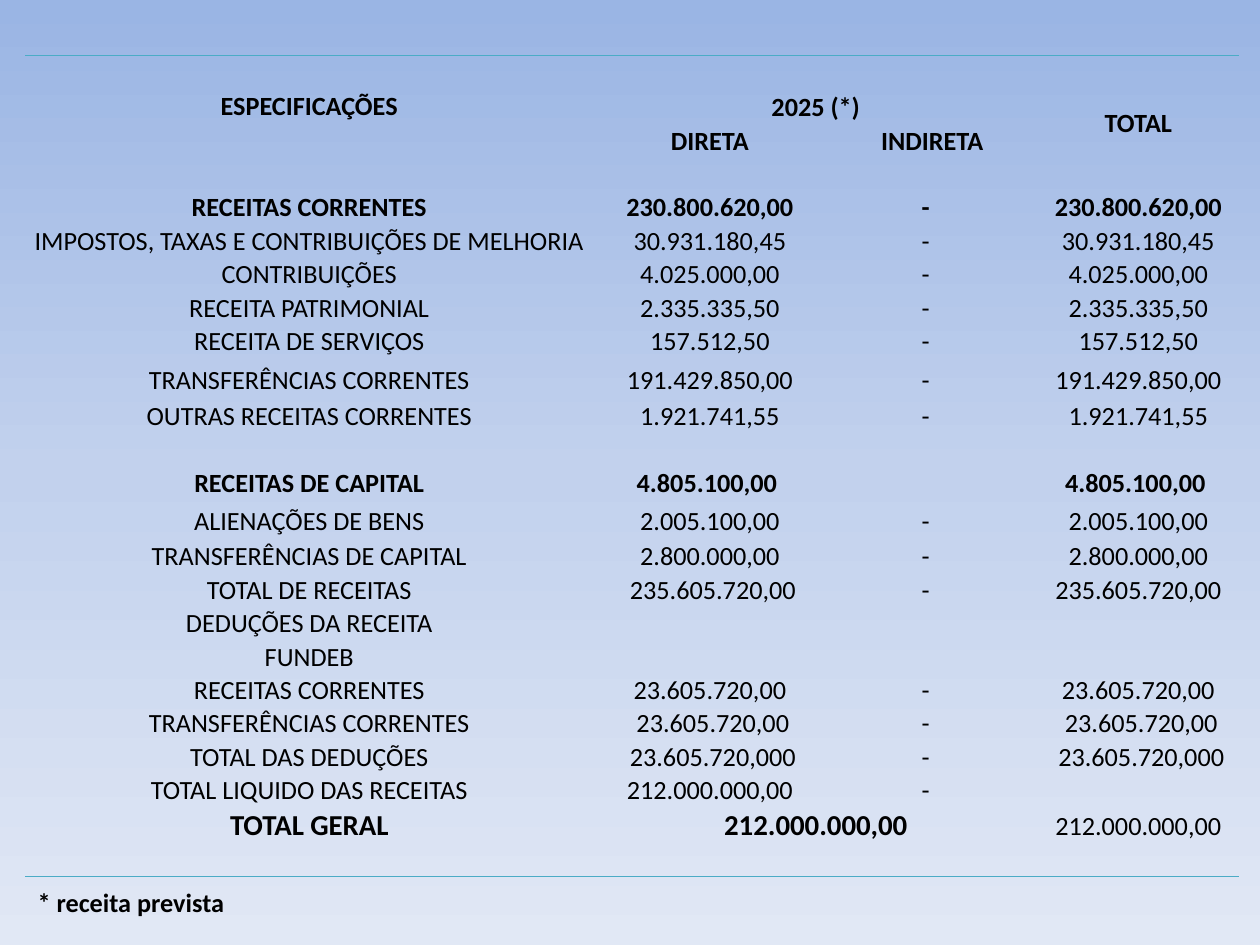
import copy

import pptx
import pptx.dml.color
import pptx.enum.text
import pptx.oxml
import pptx.oxml.ns
import pptx.util

Pt = pptx.util.Pt
qn = pptx.oxml.ns.qn
Anchor = pptx.enum.text.MSO_ANCHOR
BLACK = pptx.dml.color.RGBColor(0x00, 0x00, 0x00)
TEAL = pptx.dml.color.RGBColor(0x4B, 0xAC, 0xC6)
SKY = [
    (0, pptx.dml.color.RGBColor(0x9A, 0xB5, 0xE4)),
    (0.5, pptx.dml.color.RGBColor(0xC2, 0xD1, 0xED)),
    (1, pptx.dml.color.RGBColor(0xE1, 0xE8, 0xF5)),
]
FONT = "Calibri"
BODY_SIZE, TOTAL_SIZE = 15, 16.5
NO_STYLE = "{2D5ABB26-0587-4C30-8999-92F81FD0307C}"

COLUMN_WIDTHS = [324.7, 133.2, 121, 114.5]
ROW_HEIGHT = 18.9
SPECIAL_HEIGHTS = {0: 19.4, 1: 19.4, 2: 19.4, 5: 5, 9: 22.3, 10: 20.9, 13: 21.6, 14: 20.2}
ROWS = [
    ["ESPECIFICAÇÕES"],
    ["", "2025 (*)", "", "TOTAL"],
    ["", "DIRETA", "INDIRETA"],
    [],
    ["RECEITAS CORRENTES", "230.800.620,00", "-", "230.800.620,00"],
    ["IMPOSTOS, TAXAS E CONTRIBUIÇÕES DE MELHORIA", "30.931.180,45", "-", "30.931.180,45"],
    ["CONTRIBUIÇÕES", "4.025.000,00", "-", "4.025.000,00"],
    ["RECEITA PATRIMONIAL", "2.335.335,50", "-", "2.335.335,50"],
    ["RECEITA DE SERVIÇOS", "157.512,50", "-", "157.512,50"],
    ["TRANSFERÊNCIAS CORRENTES", "191.429.850,00", "-", "191.429.850,00"],
    ["OUTRAS RECEITAS CORRENTES", "1.921.741,55", "-", "1.921.741,55"],
    [],
    ["RECEITAS DE CAPITAL", "4.805.100,00", "", "4.805.100,00"],
    ["ALIENAÇÕES DE BENS", "2.005.100,00", "-", "2.005.100,00"],
    ["TRANSFERÊNCIAS DE CAPITAL", "2.800.000,00", "-", "2.800.000,00"],
    ["TOTAL DE RECEITAS", "235.605.720,00", "-", "235.605.720,00"],
    ["DEDUÇÕES DA RECEITA"],
    ["FUNDEB"],
    ["RECEITAS CORRENTES", "23.605.720,00", "-", "23.605.720,00"],
    ["TRANSFERÊNCIAS CORRENTES", "23.605.720,00", "-", "23.605.720,00"],
    ["TOTAL DAS DEDUÇÕES", "23.605.720,000", "-", "23.605.720,000"],
    ["TOTAL LIQUIDO DAS RECEITAS", "212.000.000,00", "-", "212.000.000,00"],
    ["TOTAL GERAL", "212.000.000,00"],
    [],
]
BOLD_ROWS = {0, 1, 2, 4, 12, 22}
TOTAL_ROW = 22
MIDDLE_CELLS = {(0, 0), (1, 3)}
MERGES = [
    ((0, 0), (2, 0)), ((0, 1), (0, 3)), ((1, 1), (1, 2)), ((1, 3), (2, 3)),
    ((21, 3), (22, 3)), ((22, 1), (22, 2)), ((23, 0), (23, 3)),
]
# Extra inset in points: positive on the left, negative on the right
NUDGES = {(12, 1): -3.4, (12, 3): -3.4, (15, 1): 3.4,
          (19, 1): 3.4, (19, 3): 3.4, (20, 1): 3.4, (20, 3): 3.4}
DASH_NUDGE = -7.5


def paint_background(page):
    fill = page.background.fill
    fill.gradient()
    fill.gradient_angle = 270
    stop_list = page.element.find(".//" + qn("a:gsLst"))
    stop_list.append(copy.deepcopy(stop_list[0]))
    for stop, (position, color) in zip(fill.gradient_stops, SKY):
        stop.position = position
        stop.color.rgb = color


def add_span(para, text, size, bold):
    span = para.add_run()
    span.text = text
    span.font.name = FONT
    span.font.size = Pt(size)
    span.font.bold = bold
    span.font.color.rgb = BLACK


def add_border(cell, side):
    line = pptx.oxml.parse_xml(
        f'<a:{side} {pptx.oxml.ns.nsdecls("a")} w="{Pt(1)}"><a:solidFill>'
        f'<a:srgbClr val="{TEAL}"/></a:solidFill></a:{side}>')
    cell._tc.get_or_add_tcPr().insert(0, line)


def fill_cell(cell, row, column, text):
    nudge = DASH_NUDGE if text == "-" else NUDGES.get((row, column), 0)
    size = TOTAL_SIZE if row == TOTAL_ROW else BODY_SIZE
    cell.fill.background()
    cell.margin_left = Pt(0.7 + max(nudge, 0))
    cell.margin_right = Pt(0.7 + max(-nudge, 0))
    cell.margin_top, cell.margin_bottom = Pt(0.7), Pt(0)
    middle = (row, column) in MIDDLE_CELLS
    cell.vertical_anchor = Anchor.MIDDLE if middle else Anchor.BOTTOM
    para = cell.text_frame.paragraphs[0]
    para.alignment = pptx.enum.text.PP_ALIGN.CENTER
    if text:
        add_span(para, text, size, row in BOLD_ROWS)
    else:
        # Keeps an empty cell from growing its row
        para._p.append(pptx.oxml.parse_xml(
            f'<a:endParaRPr {pptx.oxml.ns.nsdecls("a")} sz="{BODY_SIZE * 100}">'
            f'<a:latin typeface="{FONT}"/></a:endParaRPr>'))


def add_revenue_table(page):
    heights = [SPECIAL_HEIGHTS.get(row, ROW_HEIGHT) for row in range(len(ROWS))]
    frame = page.shapes.add_table(len(ROWS), len(COLUMN_WIDTHS), Pt(14.4), Pt(31.7),
                                  Pt(sum(COLUMN_WIDTHS)), Pt(sum(heights)))
    table = frame.table
    table.first_row = table.horz_banding = False
    frame.element.find(".//" + qn("a:tableStyleId")).text = NO_STYLE
    for column, width in zip(table.columns, COLUMN_WIDTHS):
        column.width = Pt(width)
    for row, (texts, height) in enumerate(zip(ROWS, heights)):
        table.rows[row].height = Pt(height)
        for column in range(len(COLUMN_WIDTHS)):
            text = texts[column] if column < len(texts) else ""
            fill_cell(table.cell(row, column), row, column, text)
    # Rules above and below the table
    for column in range(len(COLUMN_WIDTHS)):
        add_border(table.cell(0, column), "lnT")
        add_border(table.cell(len(ROWS) - 1, column), "lnB")
    for first, last in MERGES:
        table.cell(*first).merge(table.cell(*last))


def add_footnote(page, text):
    box = page.shapes.add_textbox(Pt(14.4), Pt(502.6), Pt(122.4), Pt(25.2))
    box.text_frame.word_wrap = False
    box.text_frame.auto_size = pptx.enum.text.MSO_AUTO_SIZE.SHAPE_TO_FIT_TEXT
    add_span(box.text_frame.paragraphs[0], text, BODY_SIZE, True)


def main():
    deck = pptx.Presentation()
    deck.slide_width, deck.slide_height = Pt(720), Pt(540)
    page = deck.slides.add_slide(deck.slide_layouts[6])
    paint_background(page)
    add_revenue_table(page)
    add_footnote(page, "* receita prevista")
    deck.save("out.pptx")


if __name__ == "__main__":
    main()
